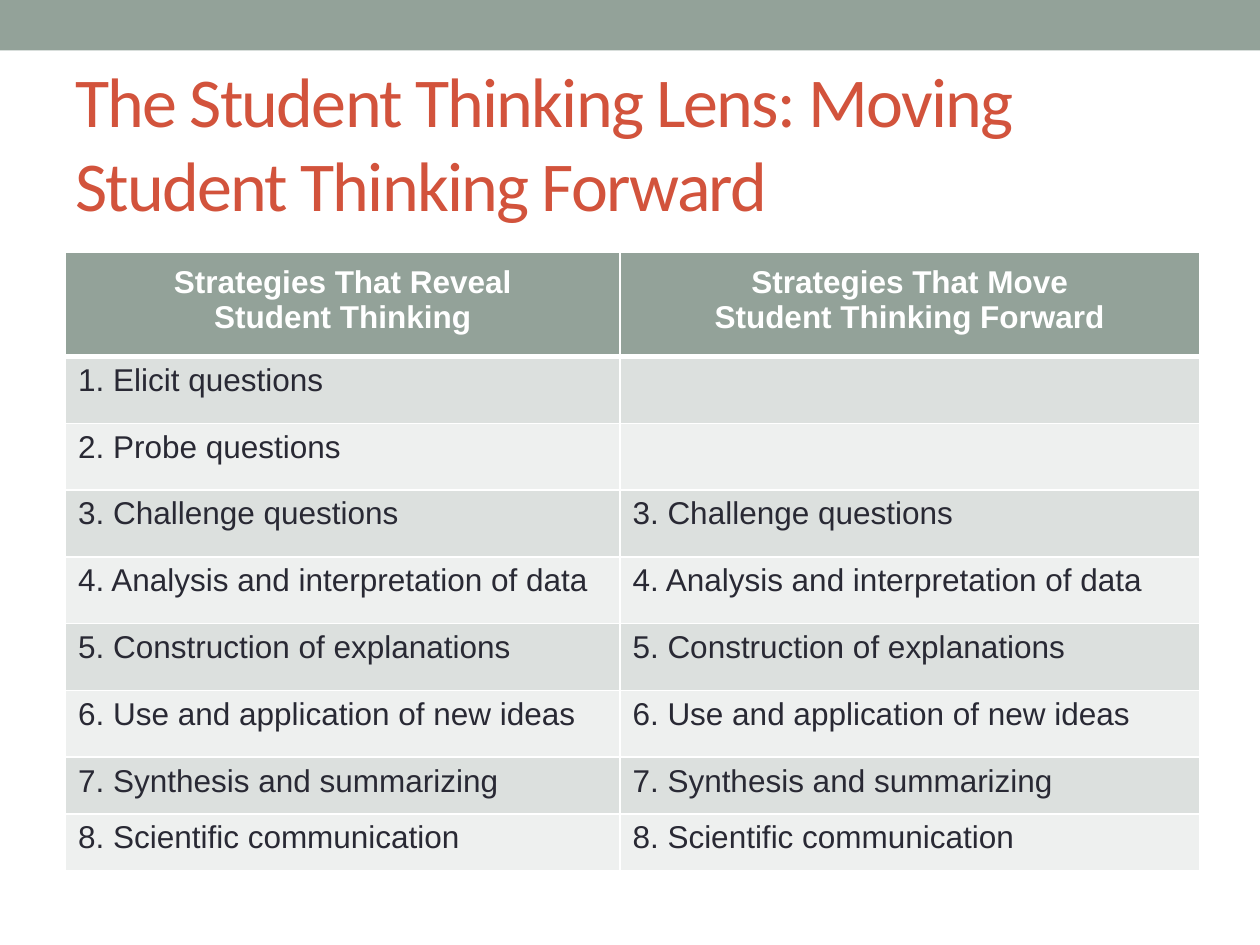
from dataclasses import dataclass

from lxml.etree import SubElement
from pptx import Presentation
from pptx.dml.color import RGBColor
from pptx.enum.shapes import MSO_SHAPE
from pptx.enum.text import MSO_ANCHOR, PP_ALIGN
from pptx.oxml.ns import qn
from pptx.util import Inches, Pt


@dataclass(frozen=True)
class Theme:
    sage: str = "93A299"
    rust: str = "D2533C"
    ink: str = "292934"
    white: str = "FFFFFF"
    bands: tuple = ("DCE0DE", "EEF0EF")
    title_font: str = "Calibri"
    body_font: str = "Arial"
    title_size: int = 40
    body_size: int = 18
    rule: int = 1
    header_rule: int = 3


@dataclass(frozen=True)
class Strategy:
    name: str
    reveals: bool = True
    moves_forward: bool = True


THEME = Theme()
TITLE = "The Student Thinking Lens: Moving Student Thinking Forward"
HEADERS = (
    ("Strategies That Reveal", "Student Thinking"),
    ("Strategies That Move", "Student Thinking Forward"),
)
STRATEGIES = (
    Strategy("Elicit questions", moves_forward=False),
    Strategy("Probe questions", moves_forward=False),
    Strategy("Challenge questions"),
    Strategy("Analysis and interpretation of data"),
    Strategy("Construction of explanations"),
    Strategy("Use and application of new ideas"),
    Strategy("Synthesis and summarizing"),
    Strategy("Scientific communication"),
)
COL_WIDTHS = (4.4, 4.6)
ROW_HEIGHTS = (0.83,) + (0.53,) * 6 + (0.45,) * 2


def add_run(p, text: str, font: str, size: int, color: str, bold: bool = False):
    r = p.add_run()
    r.text = text
    r.font.name = font
    r.font.size = Pt(size)
    r.font.bold = bold
    r.font.color.rgb = RGBColor.from_string(color)
    return r


def set_borders(cell, top: int, bottom: int) -> None:
    tc_pr = cell._tc.get_or_add_tcPr()
    widths = {"L": THEME.rule, "R": THEME.rule, "T": top, "B": bottom}
    for side, width in widths.items():
        ln = SubElement(tc_pr, qn(f"a:ln{side}"), w=str(Pt(width)))
        fill = SubElement(ln, qn("a:solidFill"))
        SubElement(fill, qn("a:srgbClr"), val=THEME.white)


def fill_cell(cell, color: str) -> None:
    cell.fill.solid()
    cell.fill.fore_color.rgb = RGBColor.from_string(color)


def add_band(s) -> None:
    sp = s.shapes.add_shape(MSO_SHAPE.RECTANGLE, 0, 0, Inches(10), Inches(0.4))
    sp.shadow.inherit = False
    sp.fill.solid()
    sp.fill.fore_color.rgb = RGBColor.from_string(THEME.sage)
    sp.line.fill.background()


def add_title(s) -> None:
    sp = s.shapes.add_textbox(Inches(0.5), Inches(0.58), Inches(8.08), Inches(1.08))
    tf = sp.text_frame
    tf.word_wrap = True
    tf.vertical_anchor = MSO_ANCHOR.MIDDLE
    r = add_run(tf.paragraphs[0], TITLE, THEME.title_font, THEME.title_size, THEME.rust)
    r.font._element.set("spc", "-100")


def write_header(cell, lines: tuple) -> None:
    set_borders(cell, THEME.rule, THEME.header_rule)
    fill_cell(cell, THEME.sage)
    cell.margin_top = Inches(0.1)
    p = cell.text_frame.paragraphs[0]
    p.alignment = PP_ALIGN.CENTER
    for i, line in enumerate(lines):
        if i:
            p.add_line_break()
        add_run(p, line, THEME.body_font, THEME.body_size, THEME.white, bold=True)


def write_strategy(cell, number: int, name: str, shown: bool) -> None:
    set_borders(cell, THEME.header_rule if number == 1 else THEME.rule, THEME.rule)
    fill_cell(cell, THEME.bands[(number - 1) % 2])
    if shown:
        p = cell.text_frame.paragraphs[0]
        add_run(p, f"{number}. {name}", THEME.body_font, THEME.body_size, THEME.ink)


def add_strategy_table(s) -> None:
    table = s.shapes.add_table(
        len(ROW_HEIGHTS), len(COL_WIDTHS), Inches(0.52), Inches(2),
        Inches(sum(COL_WIDTHS)), Inches(sum(ROW_HEIGHTS)),
    ).table
    for col, width in zip(table.columns, COL_WIDTHS):
        col.width = Inches(width)
    for row, height in zip(table.rows, ROW_HEIGHTS):
        row.height = Inches(height)
    for c, lines in enumerate(HEADERS):
        write_header(table.cell(0, c), lines)
    for number, item in enumerate(STRATEGIES, start=1):
        for c, shown in enumerate((item.reveals, item.moves_forward)):
            write_strategy(table.cell(number, c), number, item.name, shown)


def main() -> None:
    prs = Presentation()
    prs.slide_width, prs.slide_height = Inches(10), Inches(7.5)
    s = prs.slides.add_slide(prs.slide_layouts[6])
    add_band(s)
    add_title(s)
    add_strategy_table(s)
    prs.save("out.pptx")


if __name__ == "__main__":
    main()
